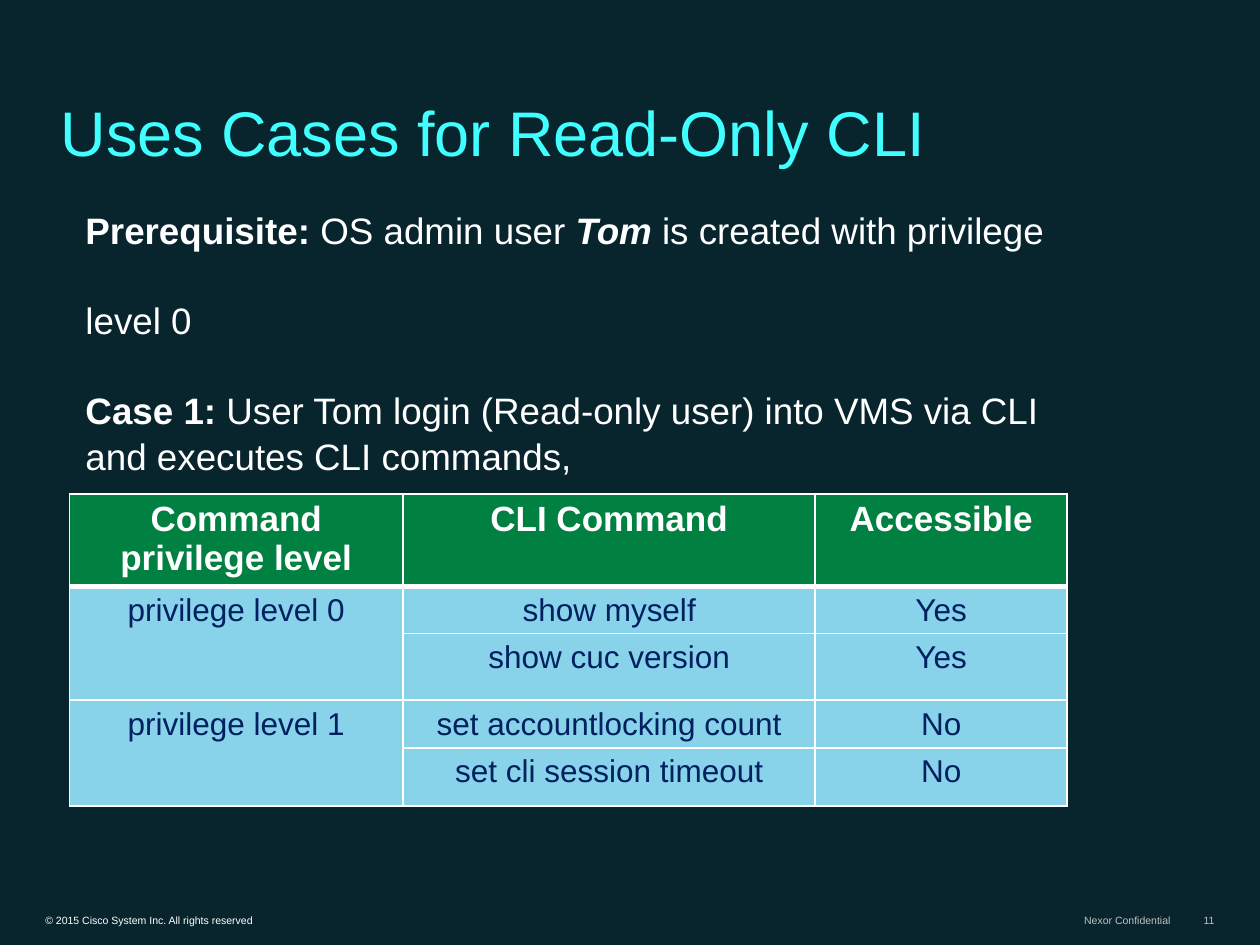
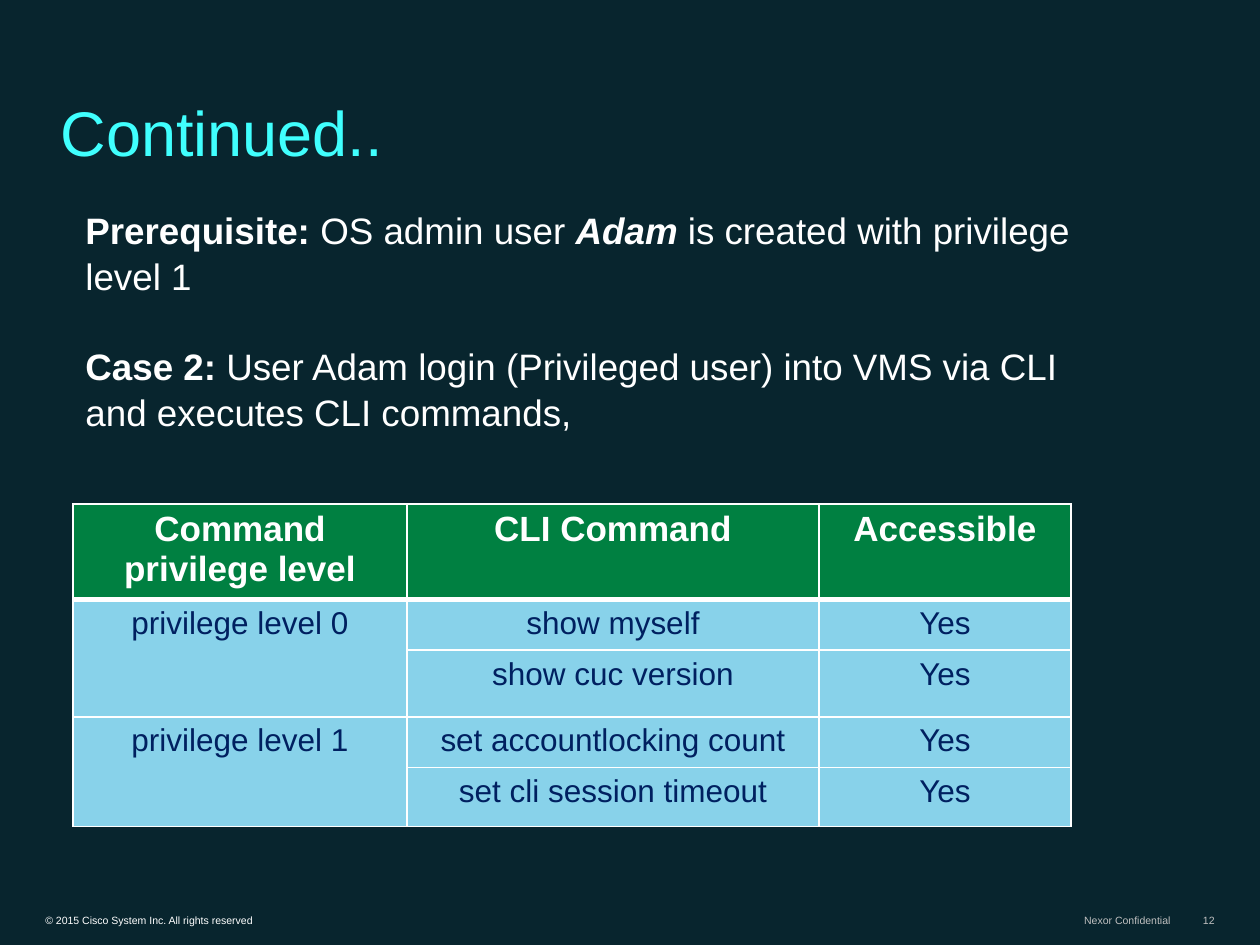
from dataclasses import dataclass

from lxml.etree import SubElement
from pptx import Presentation
from pptx.dml.color import RGBColor
from pptx.enum.text import MSO_ANCHOR, PP_ALIGN
from pptx.oxml.ns import qn
from pptx.util import Inches, Pt


@dataclass(frozen=True)
class Theme:
    font: str = "Arial"
    background: str = "08252E"
    title: str = "40FFFE"
    light: str = "FFFFFF"
    muted: str = "C0C0C0"
    header_fill: str = "008041"
    cell_fill: str = "88D2EA"
    cell_text: str = "002060"
    title_size: float = 36
    body_size: float = 21
    header_size: float = 20
    cell_size: float = 18
    footer_size: float = 6
    border: float = 1
    header_rule: float = 3


THEME = Theme()
PLAIN, BOLD, BOLD_ITALIC = (False, False), (True, False), (True, True)

COPYRIGHT = "© 2015 Cisco System Inc. All rights reserved"
CONFIDENTIAL = "Nexor Confidential"
HEADINGS = ("Command privilege level", "CLI Command", "Accessible")
COMMANDS = (
    ("privilege level 0", ("show myself", "show cuc version")),
    ("privilege level 1", ("set accountlocking count", "set cli session timeout")),
)
COLUMN_WIDTHS = (2.65, 3.27, 2)

USE_CASES = (
    {
        "title": "Uses Cases for Read-Only CLI",
        "number": 11,
        "body_width": 7.92,
        "body": (
            (("Prerequisite: ", BOLD), ("OS admin user ", PLAIN),
             ("Tom ", BOLD_ITALIC), ("is created with privilege", PLAIN)),
            (("level 0", PLAIN),),
            (("Case 1: ", BOLD),
             ("User Tom login (Read-only user) into VMS via CLI "
              "and executes CLI commands,", PLAIN)),
        ),
        "access": ("Yes", "Yes", "No", "No"),
        "table_at": (0.55, 3.92),
        "row_heights": (0.73, 0.37, 0.53, 0.38, 0.46),
    },
    {
        "title": "Continued..",
        "number": 12,
        "body_width": 8.17,
        "body": (
            (("Prerequisite: ", BOLD), ("OS admin user ", PLAIN),
             ("Adam", BOLD_ITALIC),
             (" is created with privilege level 1", PLAIN)),
            (("Case 2: ", BOLD),
             ("User Adam login (Privileged user) into VMS via CLI "
              "and executes CLI commands,", PLAIN)),
        ),
        "access": ("Yes", "Yes", "Yes", "Yes"),
        "table_at": (0.58, 4),
        "row_heights": (0.76, 0.4, 0.53, 0.4, 0.47),
    },
)


def style_font(font, size, color, bold=False):
    font.name = THEME.font
    font.size = Pt(size)
    font.color.rgb = RGBColor.from_string(color)
    font.bold = bold


def add_frame(slide, left, top, width, height, anchor=MSO_ANCHOR.TOP):
    box = slide.shapes.add_textbox(*map(Inches, (left, top, width, height)))
    frame = box.text_frame
    frame.word_wrap = True
    frame.vertical_anchor = anchor
    return frame


def add_line(slide, place, text, size, color, align=PP_ALIGN.LEFT, inset=0.05):
    frame = add_frame(slide, *place, anchor=MSO_ANCHOR.BOTTOM)
    frame.margin_left = frame.margin_right = Inches(0.09)
    frame.margin_top = frame.margin_bottom = Inches(inset)
    line = frame.paragraphs[0]
    line.text = text
    line.alignment = align
    style_font(line.font, size, color)
    return line


def add_footer(slide, number):
    for left, width, text, color, align in (
        (0.27, 3.74, COPYRIGHT, THEME.light, PP_ALIGN.LEFT),
        (8.18, 1.2, CONFIDENTIAL, THEME.muted, PP_ALIGN.RIGHT),
        (9.33, 0.4, str(number), THEME.muted, PP_ALIGN.RIGHT),
    ):
        add_line(slide, (left, 7.2, width, 0.19), text,
                 THEME.footer_size, color, align, inset=0.04)


def add_body(slide, statements, width):
    frame = add_frame(slide, 0.58, 1.58, width, 2.17)
    for index, statement in enumerate(statements):
        paragraph = frame.add_paragraph() if index else frame.paragraphs[0]
        paragraph.line_spacing = 1.05
        if index:
            paragraph.space_before = Pt(25)
        for text, (bold, italic) in statement:
            run = paragraph.add_run()
            run.text = text
            style_font(run.font, THEME.body_size, THEME.light, bold)
            run.font.italic = italic


def set_borders(cell, row):
    properties = cell._tc.get_or_add_tcPr()
    widths = {
        "a:lnL": THEME.border,
        "a:lnR": THEME.border,
        "a:lnT": THEME.header_rule if row == 1 else THEME.border,
        "a:lnB": THEME.header_rule if row == 0 else THEME.border,
    }
    for position, (side, width) in enumerate(widths.items()):
        edge = SubElement(properties, qn(side), w=str(Pt(width)))
        fill = SubElement(edge, qn("a:solidFill"))
        SubElement(fill, qn("a:srgbClr"), val=THEME.light)
        properties.insert(position, edge)


def add_access_table(slide, case):
    rows = [HEADINGS]
    answers = iter(case["access"])
    for level, commands in COMMANDS:
        for index, command in enumerate(commands):
            rows.append(("" if index else level, command, next(answers)))

    heights = case["row_heights"]
    size = (sum(COLUMN_WIDTHS), sum(heights))
    table = slide.shapes.add_table(
        len(rows), len(HEADINGS), *map(Inches, case["table_at"] + size)).table
    table.horz_banding = False
    for column, width in zip(table.columns, COLUMN_WIDTHS):
        column.width = Inches(width)
    for row, height in zip(table.rows, heights):
        row.height = Inches(height)

    for r, values in enumerate(rows):
        header = r == 0
        for c, value in enumerate(values):
            cell = table.cell(r, c)
            cell.margin_top, cell.margin_bottom = Inches(0.05), Inches(0.02)
            cell.fill.solid()
            cell.fill.fore_color.rgb = RGBColor.from_string(
                THEME.header_fill if header else THEME.cell_fill)
            set_borders(cell, r)
            paragraph = cell.text_frame.paragraphs[0]
            paragraph.text = value
            paragraph.alignment = PP_ALIGN.CENTER
            style_font(paragraph.font,
                       THEME.header_size if header else THEME.cell_size,
                       THEME.light if header else THEME.cell_text, header)

    first = 1
    for _, commands in COMMANDS:
        last = first + len(commands) - 1
        table.cell(first, 0).merge(table.cell(last, 0))
        first = last + 1


def add_use_case(deck, case):
    slide = deck.slides.add_slide(deck.slide_layouts[6])
    slide.background.fill.solid()
    slide.background.fill.fore_color.rgb = RGBColor.from_string(THEME.background)
    add_footer(slide, case["number"])
    title = add_line(slide, (0.39, 0.47, 9.25, 0.92), case["title"],
                     THEME.title_size, THEME.title)
    title.line_spacing = 0.8
    add_body(slide, case["body"], case["body_width"])
    add_access_table(slide, case)


def main():
    deck = Presentation()
    deck.slide_width, deck.slide_height = Inches(10), Inches(7.5)
    for case in USE_CASES:
        add_use_case(deck, case)
    deck.save("out.pptx")


if __name__ == "__main__":
    main()
